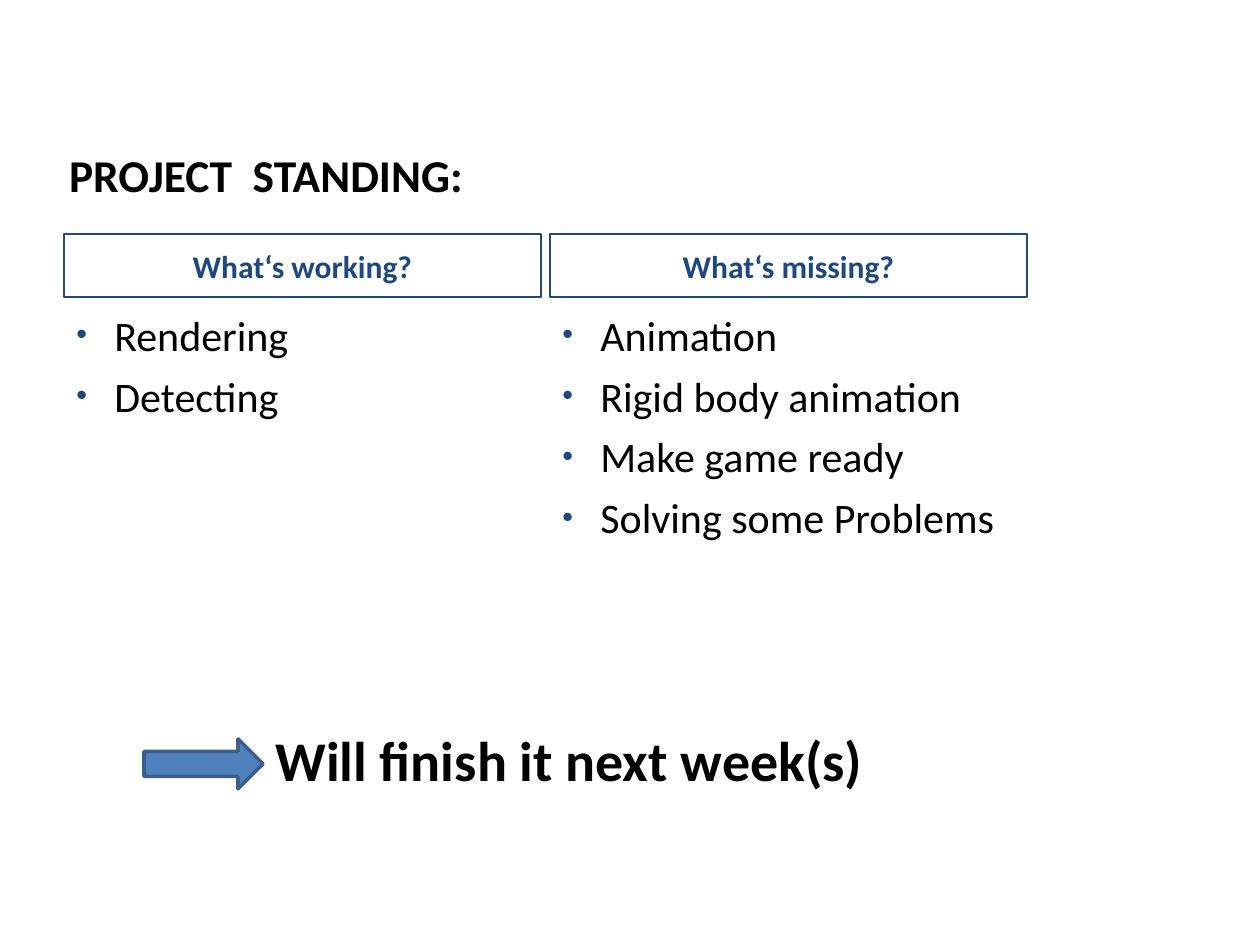
from lxml import etree
from pptx import Presentation
from pptx.dml.color import RGBColor
from pptx.enum.shapes import MSO_SHAPE as Shape
from pptx.enum.text import MSO_ANCHOR as Anchor, PP_ALIGN as Align
from pptx.oxml.ns import qn
from pptx.util import Emu, Pt

EMU_PER_PX = 914400 / 126
FONT = "Calibri"
BLACK, NAVY, BLUE, STEEL = "000000", "1F497D", "4F81BD", "3A5F8C"

COLUMN_LEFT, COLUMN_STEP, COLUMN_WIDTH = 64, 486, 477
COLUMNS = [
    ("What‘s working?", ["Rendering", "Detecting"]),
    ("What‘s missing?", ["Animation", "Rigid body animation",
                         "Make game ready", "Solving some Problems"]),
]


def px(value):
    return Emu(round(value * EMU_PER_PX))


def color(hex_string):
    return RGBColor.from_string(hex_string)


def style(paragraph, size, hex_string, bold=False):
    font = paragraph.font
    font.name, font.size, font.bold = FONT, Pt(size), bold
    font.color.rgb = color(hex_string)


def add_text(slide, left, top, width, height, text, size,
             bold=False, anchor=Anchor.TOP, wrap=True):
    box = slide.shapes.add_textbox(px(left), px(top), px(width), px(height))
    frame = box.text_frame
    frame.word_wrap = wrap
    frame.vertical_anchor = anchor
    frame.text = text
    for paragraph in frame.paragraphs:
        style(paragraph, size, BLACK, bold)
    return frame


def add_shape(slide, kind, left, top, width, height, line, line_width, fill=None):
    shape = slide.shapes.add_shape(kind, px(left), px(top), px(width), px(height))
    shape.shadow.inherit = False
    if fill:
        shape.fill.solid()
        shape.fill.fore_color.rgb = color(fill)
    else:
        shape.fill.background()
    shape.line.color.rgb = color(line)
    shape.line.width = Pt(line_width)
    return shape


def add_header(slide, left, text):
    shape = add_shape(slide, Shape.RECTANGLE, left, 234, COLUMN_WIDTH, 63, NAVY, 1)
    frame = shape.text_frame
    frame.text = text
    frame.vertical_anchor = Anchor.MIDDLE
    frame.paragraphs[0].alignment = Align.CENTER
    style(frame.paragraphs[0], 18, NAVY, bold=True)


def add_bullet(paragraph):
    properties = paragraph._p.get_or_add_pPr()
    properties.set("marL", str(px(38)))
    properties.set("indent", str(px(-38)))
    bullet_color = etree.SubElement(properties, qn("a:buClr"))
    etree.SubElement(bullet_color, qn("a:srgbClr"), val=NAVY)
    etree.SubElement(properties, qn("a:buSzPct"), val="73000")
    etree.SubElement(properties, qn("a:buFont"), typeface="Arial")
    etree.SubElement(properties, qn("a:buChar"), char="•")


def add_bullets(slide, left, items):
    box = slide.shapes.add_textbox(px(left), px(303), px(COLUMN_WIDTH), px(567))
    frame = box.text_frame
    frame.word_wrap = True
    frame.text = "\n".join(items)
    for index, paragraph in enumerate(frame.paragraphs):
        add_bullet(paragraph)
        style(paragraph, 24, BLACK)
        if index:
            paragraph.space_before = Pt(6)


def main():
    presentation = Presentation()
    presentation.slide_width, presentation.slide_height = px(1260), px(945)
    slide = presentation.slides.add_slide(presentation.slide_layouts[6])

    # Title
    title = add_text(slide, 63, 44, 964, 158, "PROJECT  STANDING:", 26,
                     bold=True, anchor=Anchor.BOTTOM)
    title.margin_left = title.margin_right = px(6)
    title.margin_top = title.margin_bottom = 0

    # Columns with a framed header and a bullet list
    for index, (header, items) in enumerate(COLUMNS):
        left = COLUMN_LEFT + index * COLUMN_STEP
        add_header(slide, left, header)
        add_bullets(slide, left, items)

    # Conclusion with its arrow
    add_text(slide, 263, 719, 620, 81, "Will finish it next week(s)", 32,
             bold=True, wrap=False)
    add_shape(slide, Shape.RIGHT_ARROW, 144, 739, 119, 50, STEEL, 2, fill=BLUE)

    presentation.save("out.pptx")


if __name__ == "__main__":
    main()
